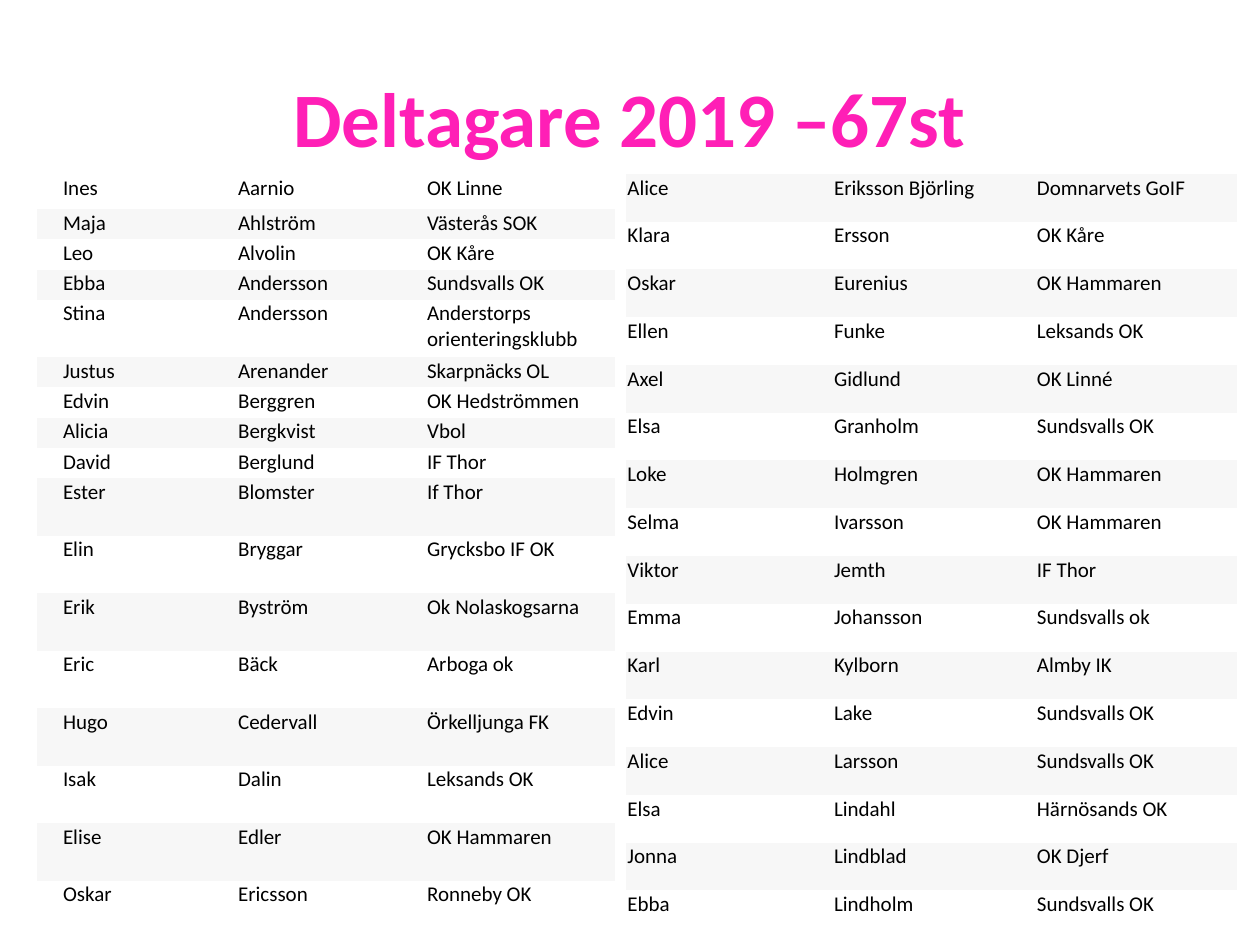
from lxml.etree import SubElement
from pptx import Presentation
from pptx.dml.color import RGBColor
from pptx.enum.text import MSO_ANCHOR, PP_ALIGN
from pptx.oxml import parse_xml
from pptx.oxml.ns import nsdecls, qn
from pptx.util import Inches, Pt

FONT = "Calibri"
PINK, BLACK, WHITE, GREY = "FF1FB6", "000000", "FFFFFF", "F7F7F7"
NO_GRID_STYLE = "{2D5ABB26-0587-4C30-8999-92F81FD0307C}"
CELL_FORMAT = {
    "margin_left": Inches(0.01),
    "margin_top": Inches(0.01),
    "margin_right": Inches(0.01),
    "margin_bottom": Inches(0.01),
    "vertical_anchor": MSO_ANCHOR.TOP,
}

# The first column of the left table is an empty margin
LEFT_ROWS = [
    ("", "Ines", "Aarnio", "OK Linne"),
    ("", "Maja", "Ahlström", "Västerås SOK"),
    ("", "Leo", "Alvolin", "OK Kåre"),
    ("", "Ebba", "Andersson", "Sundsvalls OK"),
    ("", "Stina", "Andersson", "Anderstorps orienteringsklubb"),
    ("", "Justus", "Arenander", "Skarpnäcks OL"),
    ("", "Edvin", "Berggren", "OK Hedströmmen"),
    ("", "Alicia", "Bergkvist", "Vbol"),
    ("", "David", "Berglund", "IF Thor"),
    ("", "Ester", "Blomster", "If Thor"),
    ("", "Elin", "Bryggar", "Grycksbo IF OK"),
    ("", "Erik", "Byström", "Ok Nolaskogsarna"),
    ("", "Eric", "Bäck", "Arboga ok"),
    ("", "Hugo", "Cedervall", "Örkelljunga FK"),
    ("", "Isak", "Dalin", "Leksands OK"),
    ("", "Elise", "Edler", "OK Hammaren"),
    ("", "Oskar", "Ericsson", "Ronneby OK"),
]
RIGHT_ROWS = [
    ("Alice", "Eriksson Björling", "Domnarvets GoIF"),
    ("Klara", "Ersson", "OK Kåre"),
    ("Oskar", "Eurenius", "OK Hammaren"),
    ("Ellen", "Funke", "Leksands OK"),
    ("Axel", "Gidlund", "OK Linné"),
    ("Elsa", "Granholm", "Sundsvalls OK"),
    ("Loke", "Holmgren", "OK Hammaren"),
    ("Selma", "Ivarsson", "OK Hammaren"),
    ("Viktor", "Jemth", "IF Thor"),
    ("Emma", "Johansson", "Sundsvalls ok"),
    ("Karl", "Kylborn", "Almby IK"),
    ("Edvin", "Lake", "Sundsvalls OK"),
    ("Alice", "Larsson", "Sundsvalls OK"),
    ("Elsa", "Lindahl", "Härnösands OK"),
    ("Jonna", "Lindblad", "OK Djerf"),
    ("Ebba", "Lindholm", "Sundsvalls OK"),
]


def color(value):
    return RGBColor.from_string(value)


def add_run(p, text, size, fill, bold=False):
    r = p.add_run()
    r.text = text
    for name, value in {"name": FONT, "size": Pt(size), "bold": bold}.items():
        setattr(r.font, name, value)
    r.font.color.rgb = color(fill)
    return r


def add_title(s, box, text):
    tf = s.shapes.add_textbox(*map(Inches, box)).text_frame
    tf.word_wrap = True
    tf.vertical_anchor = MSO_ANCHOR.MIDDLE
    p = tf.paragraphs[0]
    p.alignment = PP_ALIGN.CENTER
    r = add_run(p, text, 44, PINK, bold=True)
    # White outline around the letters
    outline = parse_xml(
        f'<a:ln {nsdecls("a")} w="{Pt(1.4)}"><a:solidFill>'
        f'<a:srgbClr val="{WHITE}"/></a:solidFill></a:ln>')
    r.font._element.insert(0, outline)


def fill_cell(cell, text, fill):
    for name, value in CELL_FORMAT.items():
        setattr(cell, name, value)
    cell.fill.solid()
    cell.fill.fore_color.rgb = color(fill)
    p = cell.text_frame.paragraphs[0]
    if text:
        add_run(p, text, 12, BLACK)
    else:
        # Keeps an empty cell from stretching its row
        SubElement(p._p, qn("a:endParaRPr"), sz="1200")


def add_names(s, box, rows, widths, heights, fills):
    frame = s.shapes.add_table(len(rows), len(widths), *map(Inches, box))
    table = frame.table
    table.first_row = table.horz_banding = False
    table._tbl.tblPr.find(qn("a:tableStyleId")).text = NO_GRID_STYLE
    for column, width in zip(table.columns, widths):
        column.width = Inches(width)
    for i, (row, height) in enumerate(zip(rows, heights)):
        table.rows[i].height = Inches(height)
        for j, text in enumerate(row):
            fill_cell(table.cell(i, j), text, fills[i % 2])


def main():
    prs = Presentation()
    prs.slide_width, prs.slide_height = Inches(10), Inches(7.5)
    s = prs.slides.add_slide(prs.slide_layouts[6])

    add_title(s, (0.5, 0.3, 9, 1.25), "Deltagare 2019 –67st")

    top, height = 1.38, 6.07

    # Left table: seven low rows, the tall rows share what is left
    first, low = 0.28, 0.24
    tall = (height - first - 7 * low) / 9
    heights = [first] + [low] * 3 + [tall] + [low] * 4 + [tall] * 8
    add_names(s, (0.29, top, 4.59, height), LEFT_ROWS,
              [0.2, 1.39, 1.5, 1.5], heights, (WHITE, GREY))

    # Right table: equal rows
    count = len(RIGHT_ROWS)
    add_names(s, (4.97, top, 4.85, height), RIGHT_ROWS,
              [1.64, 1.61, 1.6], [height / count] * count, (GREY, WHITE))

    prs.save("out.pptx")


if __name__ == "__main__":
    main()
